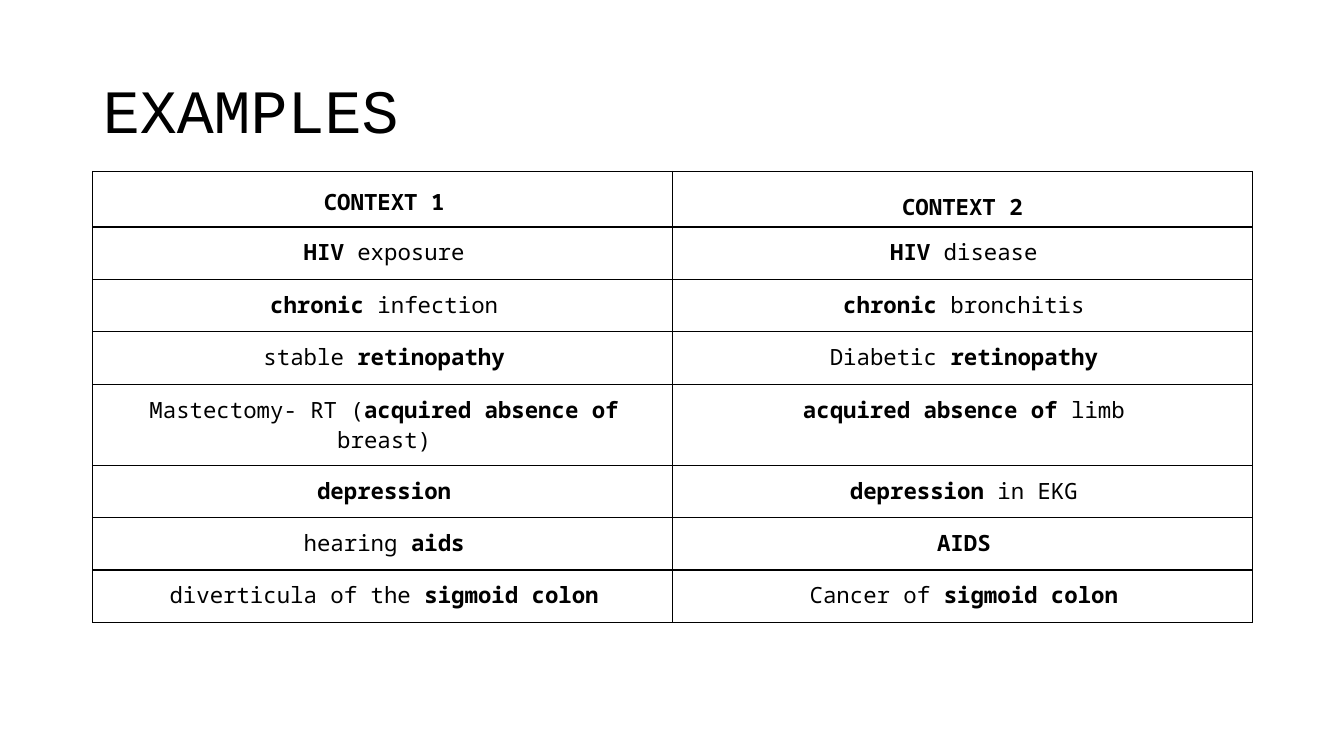
from pptx import Presentation
from pptx.dml.color import RGBColor
from pptx.enum import text
from pptx.oxml import parse_xml
from pptx.oxml.ns import nsdecls
from pptx.util import Inches, Pt

# Content: asterisks enclose the bold words
TITLE = "EXAMPLES"
CONTEXT_PAIRS = [
    ("*CONTEXT 1*", "*CONTEXT 2*"),
    ("*HIV* exposure", "*HIV* disease"),
    ("*chronic* infection", "*chronic* bronchitis"),
    ("stable *retinopathy*", "Diabetic *retinopathy*"),
    ("Mastectomy- RT (*acquired absence of* breast)", "*acquired absence of* limb"),
    ("*depression*", "*depression* in EKG"),
    ("hearing *aids*", "*AIDS*"),
    ("diverticula of the *sigmoid colon*", "Cancer of *sigmoid colon*"),
]

THEME = {
    "ink": "000000",
    "title": {"name": "Courier New", "size": Pt(44)},
    "cell": {"name": "Noto Sans Mono", "size": Pt(16)},
    "border": Pt(1),
}

# Layout in inches; margins run left, top, right, bottom
LEFT, WIDTH = 0.92, 11.5
TABLE_TOP, HEADER_HEIGHT, ROW_HEIGHT = 1.7, 0.31, 0.52
CELL_MARGINS = (0.1, 0.1, 0.07, 0.1)
LAST_HEADER_MARGINS = (0.1, 0.2, 0.1, 0.05)


def set_all(target, values):
    for key, value in values.items():
        setattr(target, key, value)


def add_words(paragraph, words, style, bold):
    run = paragraph.add_run()
    run.text = words
    set_all(run.font, {**style, "bold": bold})
    run.font.color.rgb = RGBColor.from_string(THEME["ink"])


def add_borders(cell):
    properties = cell._tc.get_or_add_tcPr()
    for index, side in enumerate(("lnL", "lnR", "lnT", "lnB")):
        properties.insert(index, parse_xml(
            f'<a:{side} {nsdecls("a")} w="{THEME["border"]}"><a:solidFill>'
            f'<a:srgbClr val="{THEME["ink"]}"/></a:solidFill></a:{side}>'))


def fill_cell(cell, phrase, margins, anchor):
    cell.fill.background()
    sides = ("margin_left", "margin_top", "margin_right", "margin_bottom")
    set_all(cell, dict(zip(sides, map(Inches, margins))))
    cell.vertical_anchor = anchor
    paragraph = cell.text_frame.paragraphs[0]
    set_all(paragraph, {"alignment": text.PP_ALIGN.CENTER, "space_before": Pt(2)})
    for index, words in enumerate(phrase.split("*")):
        if words:
            add_words(paragraph, words, THEME["cell"], index % 2 == 1)
    add_borders(cell)


def main():
    deck = Presentation()
    set_all(deck, {"slide_width": Inches(13.33), "slide_height": Inches(7.5)})
    slide = deck.slides.add_slide(deck.slide_layouts[5])

    # Title
    heading = slide.shapes.title
    set_all(heading, {"left": Inches(LEFT), "top": Inches(0.4),
                      "width": Inches(WIDTH), "height": Inches(1.45)})
    heading.text_frame.vertical_anchor = text.MSO_ANCHOR.MIDDLE
    paragraph = heading.text_frame.paragraphs[0]
    set_all(paragraph, {"alignment": text.PP_ALIGN.LEFT, "line_spacing": 0.9})
    add_words(paragraph, TITLE, THEME["title"], False)

    # Table of contexts
    row_count, column_count = len(CONTEXT_PAIRS), len(CONTEXT_PAIRS[0])
    height = HEADER_HEIGHT + ROW_HEIGHT * (row_count - 1)
    contexts = slide.shapes.add_table(
        row_count, column_count, Inches(LEFT), Inches(TABLE_TOP),
        Inches(WIDTH), Inches(height)).table
    set_all(contexts, {"first_row": False, "horz_banding": False})
    for row, pair in enumerate(CONTEXT_PAIRS):
        is_header = row == 0
        contexts.rows[row].height = Inches(HEADER_HEIGHT if is_header else ROW_HEIGHT)
        anchor = text.MSO_ANCHOR.BOTTOM if is_header else text.MSO_ANCHOR.TOP
        for column, phrase in enumerate(pair):
            is_last_header = is_header and column == column_count - 1
            margins = LAST_HEADER_MARGINS if is_last_header else CELL_MARGINS
            fill_cell(contexts.cell(row, column), phrase, margins, anchor)

    deck.save("out.pptx")


if __name__ == "__main__":
    main()
